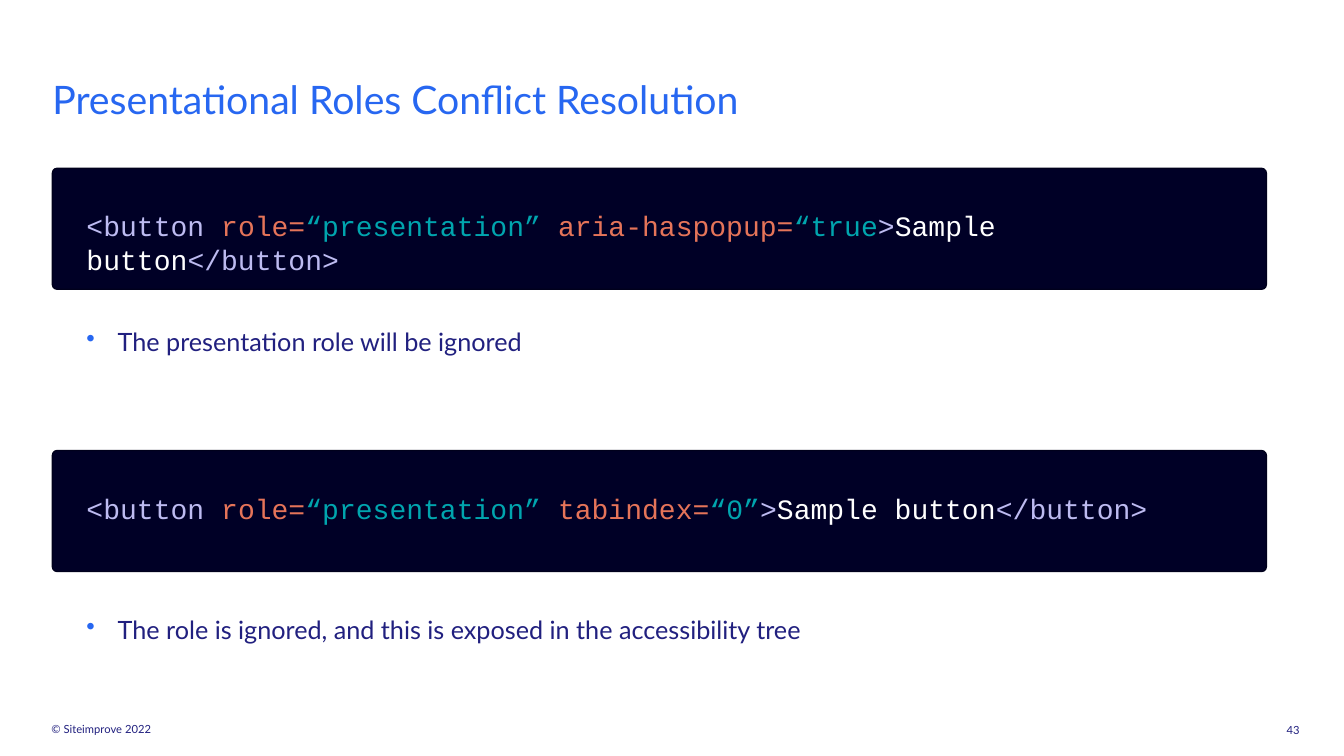
from lxml import etree
from pptx import Presentation
from pptx.dml.color import RGBColor
from pptx.enum.shapes import MSO_SHAPE
from pptx.enum.text import MSO_ANCHOR, PP_ALIGN
from pptx.oxml.ns import qn
from pptx.util import Pt

PX = 9144
ROUNDED = MSO_SHAPE.ROUNDED_RECTANGLE
TOP, MIDDLE = MSO_ANCHOR.TOP, MSO_ANCHOR.MIDDLE
LEFT, CENTER = PP_ALIGN.LEFT, PP_ALIGN.CENTER

THEME = {
    "body_font": "Lato", "code_font": "Courier New",
    "title_size": 28, "code_size": 20, "bullet_size": 18, "footer_size": 8,
    "blue": "2767F1", "navy": "21207F", "panel": "000026", "panel_line": "00001C",
    "tag": "BDBBF1", "attr": "E57459", "value": "00A5AE", "content": "FFFFFF",
}


def rgb(name):
    return RGBColor.from_string(THEME[name])


def add_text(box, text, size, color="navy", font="body_font", inset=(0, 0),
             anchor=TOP, align=LEFT, spacing=None, bullet=False):
    tb = slide.shapes.add_textbox(*[v * PX for v in box])
    tf = tb.text_frame
    tf.word_wrap = True
    tf.vertical_anchor = anchor
    tf.margin_left = tf.margin_right = inset[0] * PX
    tf.margin_top = tf.margin_bottom = inset[1] * PX
    p = tf.paragraphs[0]
    p.alignment = align
    if spacing:
        p.line_spacing = spacing
    if bullet:
        pPr = p._p.get_or_add_pPr()
        pPr.set("marL", str(31 * PX))
        pPr.set("indent", str(-31 * PX))
        clr = etree.SubElement(pPr, qn("a:buClr"))
        etree.SubElement(clr, qn("a:srgbClr")).set("val", THEME["blue"])
        etree.SubElement(pPr, qn("a:buChar")).set("char", "•")
    runs = [(text, color)] if isinstance(text, str) else text
    for part, part_color in runs:
        r = p.add_run()
        r.text = part
        r.font.name = THEME[font]
        r.font.size = Pt(THEME[size])
        r.font.color.rgb = rgb(part_color)


prs = Presentation()
prs.slide_width = 1333 * PX
prs.slide_height = 750 * PX
slide = prs.slides.add_slide(prs.slide_layouts[6])

add_text((51, 710, 363, 27), "© Siteimprove 2022", "footer_size", anchor=MIDDLE)
add_text((52, 80, 1228, 43), "Presentational Roles Conflict Resolution",
         "title_size", color="blue", spacing=0.9)

opening = [("<button ", "tag"), ("role=", "attr"), ("“presentation” ", "value")]
closing = [(">", "tag"), ("Sample button", "content"), ("</button>", "tag")]
examples = [
    (167, 202, 319, [("aria-haspopup=", "attr"), ("“true", "value")],
     "The presentation role will be ignored"),
    (447, 483, 605, [("tabindex=", "attr"), ("“0”", "value")],
     "The role is ignored, and this is exposed in the accessibility tree"),
]
for panel_top, code_top, note_top, attribute, note in examples:
    sp = slide.shapes.add_shape(ROUNDED, 52 * PX, panel_top * PX, 1204 * PX, 120 * PX)
    sp.adjustments[0] = 0.04
    sp.shadow.inherit = False
    sp.fill.solid()
    sp.fill.fore_color.rgb = rgb("panel")
    sp.line.color.rgb = rgb("panel_line")
    sp.line.width = Pt(1)
    add_text((76, code_top, 1134, 44), opening + attribute + closing, "code_size",
             font="code_font", inset=(10, 5))
    add_text((76, note_top, 1180, 40), note, "bullet_size", inset=(10, 5), bullet=True)

add_text((1257, 697, 51, 54), "43", "footer_size", anchor=MIDDLE, align=CENTER)

prs.save("out.pptx")
